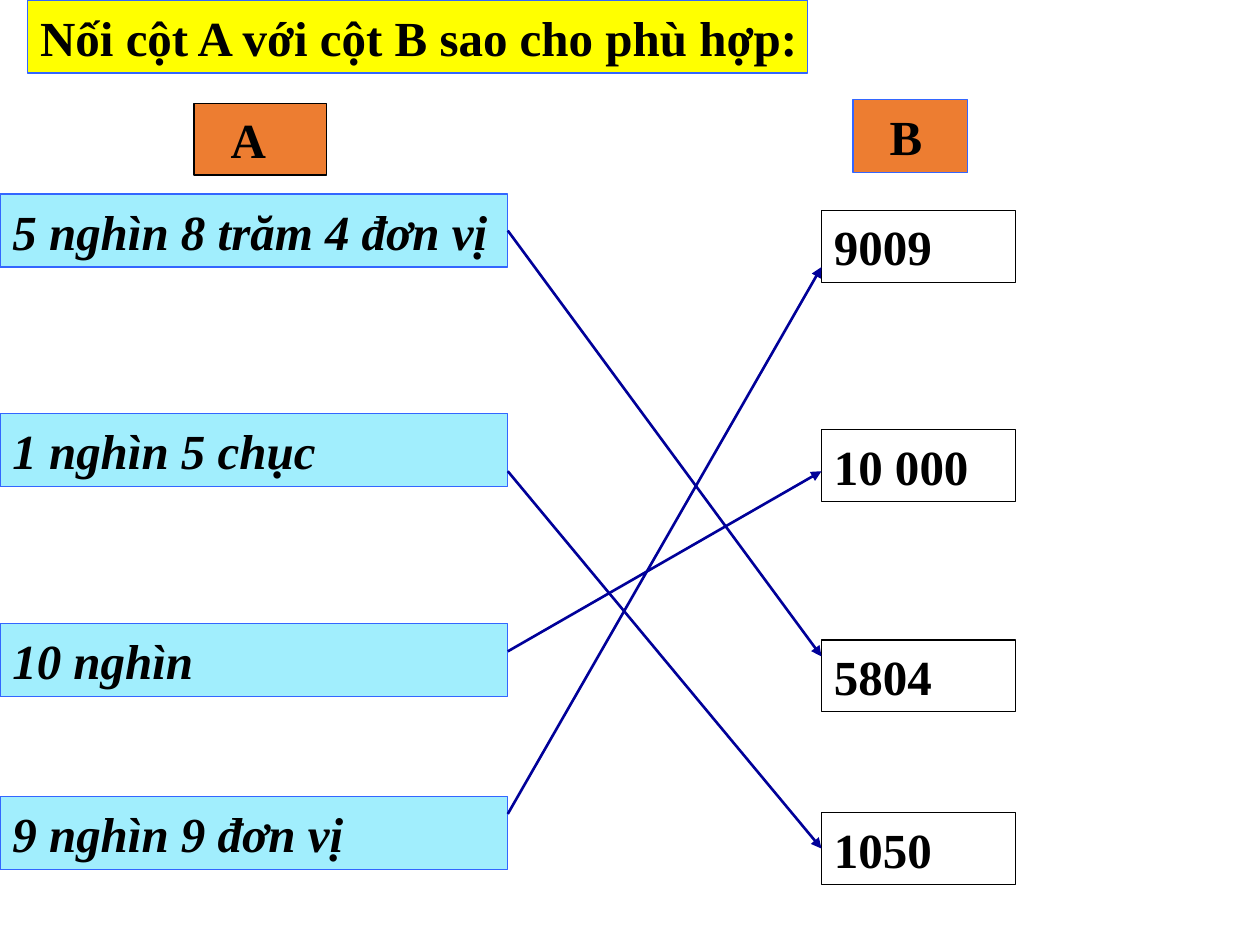
"""Build a matching exercise: number phrases in column A, numerals in column B."""
from pptx import Presentation
from pptx.dml.color import RGBColor
from pptx.enum.shapes import MSO_CONNECTOR as Connector, MSO_SHAPE as Shape
from pptx.enum.text import MSO_ANCHOR as Anchor, PP_ALIGN as Align
from pptx.oxml.ns import qn
from pptx.util import Inches, Pt
from lxml.etree import SubElement

FONT = "Times New Roman"
BLACK, BLUE, NAVY = "000000", "3366FF", "000099"
YELLOW, ORANGE, CYAN = "FFFF00", "ED7D31", "A1EEFD"
LEFT_WIDTH, RIGHT_X, RIGHT_WIDTH = 4.03, 6.52, 1.54
LEFT_HEIGHT, RIGHT_HEIGHT, RIGHT_DROP = 0.58, 0.57, 0.13
INSET, HEADING_INSET = 0.1, 0.29

TITLE = "Nối cột A với cột B sao cho phù hợp:"
HEADINGS = [
    ("A", (1.54, 0.82, 1.05, 0.57), BLACK),
    ("B", (6.77, 0.79, 0.91, 0.58), BLUE),
]
ROWS = [
    (1.54, "5 nghìn 8 trăm 4 đơn vị", "9009"),
    (3.28, "1 nghìn 5 chục", "10 000"),
    (4.95, "10 nghìn", "5804"),
    (6.32, "9 nghìn 9 đơn vị", "1050"),
]
MATCHES = [
    (0, 1.83, 2, 5.21),
    (1, 3.74, 3, 6.74),
    (2, 5.17, 1, 3.74),
    (3, 6.46, 0, 2.12),
]


def color(value):
    return RGBColor.from_string(value)


def add_box(slide, text, bounds, line, fill=None, italic=False, inset=INSET):
    shape = slide.shapes.add_shape(Shape.RECTANGLE, *map(Inches, bounds))
    shape.shadow.inherit = False
    if fill:
        shape.fill.solid()
        shape.fill.fore_color.rgb = color(fill)
    else:
        shape.fill.background()
    shape.line.color.rgb = color(line)
    shape.line.width = Pt(0.75)
    frame = shape.text_frame
    frame.word_wrap = False
    frame.vertical_anchor = Anchor.MIDDLE
    frame.margin_left = Inches(inset)
    paragraph = frame.paragraphs[0]
    paragraph.text = text
    paragraph.alignment = Align.LEFT
    font = paragraph.font
    font.name, font.size = FONT, Pt(28)
    font.bold, font.italic = True, italic
    font.color.rgb = color(BLACK)
    return shape


def add_arrow(slide, phrase, start_y, numeral, end_y):
    points = (LEFT_WIDTH, start_y, RIGHT_X, end_y)
    arrow = slide.shapes.add_connector(Connector.STRAIGHT, *map(Inches, points))
    tolerance = Inches(0.01)
    if abs(phrase.top + phrase.height / 2 - Inches(start_y)) < tolerance:
        arrow.begin_connect(phrase, 3)
    if abs(numeral.top + numeral.height / 2 - Inches(end_y)) < tolerance:
        arrow.end_connect(numeral, 1)
    arrow.line.color.rgb = color(NAVY)
    arrow.line.width = Pt(1.5)
    SubElement(arrow.line._get_or_add_ln(), qn("a:tailEnd"), type="triangle")
    SubElement(arrow._element.spPr, qn("a:effectLst"))


def main():
    presentation = Presentation()
    presentation.slide_width, presentation.slide_height = Inches(10), Inches(7.5)
    slide = presentation.slides.add_slide(presentation.slide_layouts[6])

    phrases = [
        add_box(slide, phrase, (0, top, LEFT_WIDTH, LEFT_HEIGHT), BLUE, CYAN, italic=True)
        for top, phrase, _ in ROWS
    ]
    numerals = [
        add_box(slide, numeral, (RIGHT_X, top + RIGHT_DROP, RIGHT_WIDTH, RIGHT_HEIGHT), BLACK)
        for top, _, numeral in ROWS
    ]
    for left, start_y, right, end_y in MATCHES:
        add_arrow(slide, phrases[left], start_y, numerals[right], end_y)

    add_box(slide, TITLE, (0.22, 0, 6.19, LEFT_HEIGHT), BLUE, YELLOW)
    for text, bounds, line in HEADINGS:
        add_box(slide, text, bounds, line, ORANGE, inset=HEADING_INSET)
    presentation.save("out.pptx")


if __name__ == "__main__":
    main()
